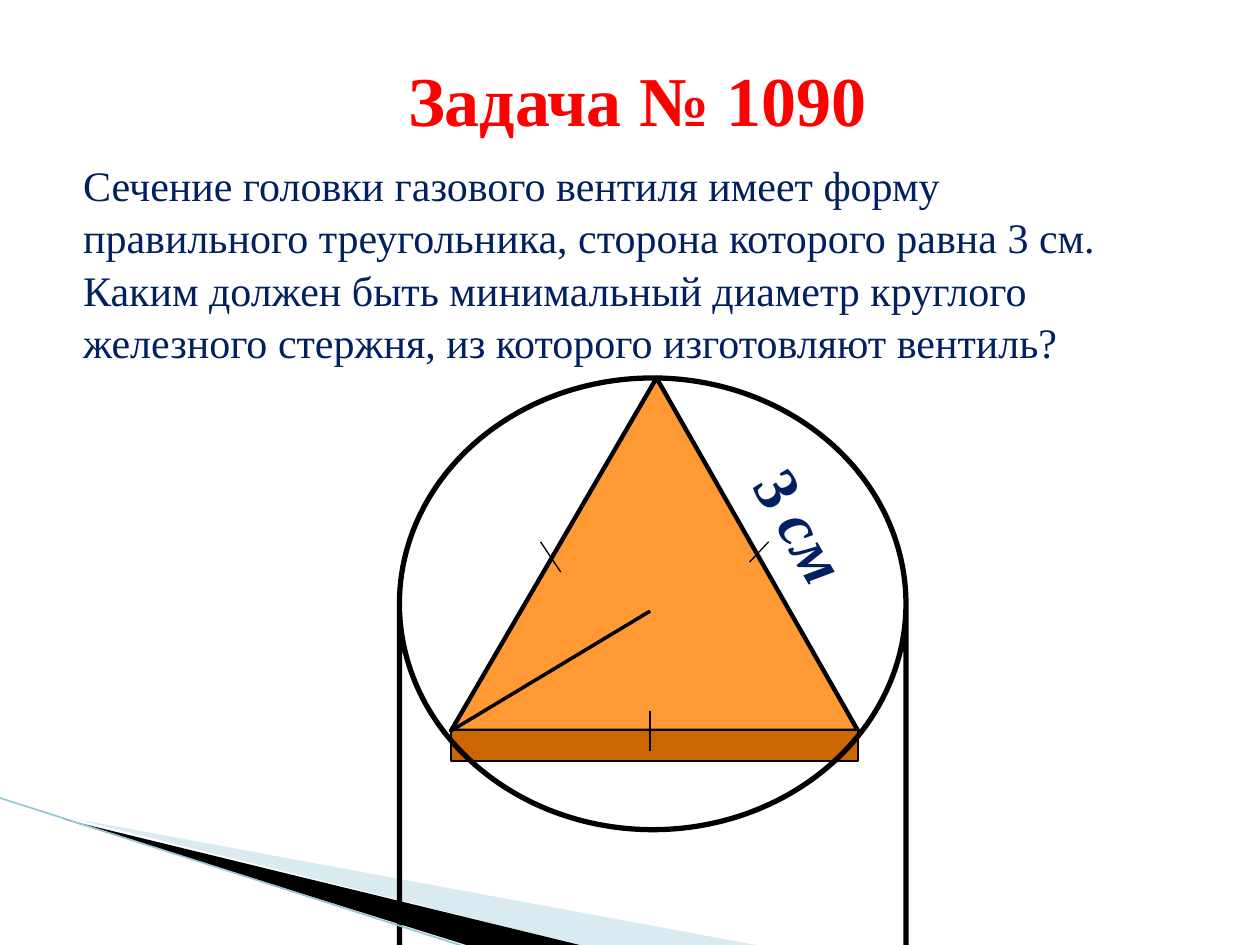
from lxml.etree import SubElement
from pptx import Presentation
from pptx.dml.color import RGBColor
from pptx.enum.shapes import MSO_CONNECTOR, MSO_SHAPE
from pptx.enum.text import MSO_ANCHOR, MSO_AUTO_SIZE, PP_ALIGN
from pptx.oxml.ns import qn
from pptx.util import Inches, Pt

COLORS = {
    "wave": "A0CBDC", "edge": "97C5D8", "black": "000000",
    "face": "FF9933", "base": "CC6600", "navy": "002060", "red": "FF0000",
}
FONT = "Times New Roman"

# Grid of 100 columns by 75 rows
prs = Presentation()
prs.slide_width, prs.slide_height = Inches(10), Inches(7.5)
CELL = prs.slide_width // 100
slide = prs.slides.add_slide(prs.slide_layouts[1])
shapes = slide.shapes


def grid(*cells):
    return [round(cell * CELL) for cell in cells]


def add_run(paragraph, text, size, color, bold=False, italic=False):
    run = paragraph.add_run()
    run.text = text
    run.font.name, run.font.size = FONT, Pt(size)
    run.font.bold, run.font.italic = bold, italic
    run.font.color.rgb = RGBColor.from_string(COLORS[color])


# Corner wave
for points, color, alpha in [
    ([(5.5, 65.1), (59.5, 75.1), (45.6, 75.1), (5.5, 65)], "wave", 40),
    ([(5.3, 64.9), (45.7, 75.1), (37.2, 75.2), (5.4, 65)], "black", 100),
]:
    builder = shapes.build_freeform(*points[0], scale=CELL)
    builder.add_line_segments(points[1:], close=True)
    wave = builder.convert_to_shape()
    wave.shadow.inherit = False
    wave.fill.solid()
    wave.fill.fore_color.rgb = RGBColor.from_string(COLORS[color])
    wave.line.fill.background()
    if alpha < 100:
        tint = wave.fill._xPr.find(qn("a:solidFill"))[0]
        SubElement(tint, qn("a:alpha"), val=str(alpha * 1000))

# Valve head: triangle, its base, and the rod around it
LEFT, TOP, WIDTH, HEIGHT = 35.8, 30, 32.3, 28
BASE = TOP + HEIGHT
for kind, box, adjust, color, weight in [
    (MSO_SHAPE.ISOSCELES_TRIANGLE, (LEFT, TOP, WIDTH, HEIGHT), 0.505, "face", 2.5),
    (MSO_SHAPE.RECTANGLE, (LEFT, BASE, WIDTH, 2.4), None, "base", 0.75),
    (MSO_SHAPE.CAN, (31.7, TOP, 40.2, 71.7), 0.892, None, 3),
]:
    part = shapes.add_shape(kind, *grid(*box))
    part.shadow.inherit = False
    if adjust:
        part.adjustments[0] = adjust
    if color:
        part.fill.solid()
        part.fill.fore_color.rgb = RGBColor.from_string(COLORS[color])
    else:
        part.fill.background()
    part.line.color.rgb = RGBColor.from_string(COLORS["black"])
    part.line.width = Pt(weight)

# Wave edge, equal-side ticks and radius
MIDDLE = 51.6
for ends, color, weight in [
    ((-0.1, 63.3, 37.1, 75.2), "edge", 0.95),
    ((42.9, 43, 44.5, 45.4), "black", 0.75),
    ((61, 43, 59.5, 44.6), "black", 0.75),
    ((MIDDLE, 59.6, MIDDLE, 56.4), "black", 0.75),
    ((MIDDLE, 48.5, LEFT, BASE), "black", 2),
]:
    stroke = shapes.add_connector(MSO_CONNECTOR.STRAIGHT, *grid(*ends))
    stroke.line.color.rgb = RGBColor.from_string(COLORS[color])
    stroke.line.width = Pt(weight)
    SubElement(stroke._element.spPr, qn("a:effectLst"))

# Side length
side = shapes.add_textbox(*grid(57.4, 39.2, 13.9, 7.1))
side.rotation = 59.6
side.text_frame.word_wrap = True
side_text = side.text_frame.paragraphs[0]
add_run(side_text, "3", 36, "navy", bold=True)
add_run(side_text, " см", 36, "navy", bold=True, italic=True)

# Heading and problem statement, in front of the drawing
heading, problem = shapes.title, slide.placeholders[1]
for holder, box, anchor in [
    (heading, (5.6, 3.6, 90, 8.4), MSO_ANCHOR.MIDDLE),
    (problem, (5.6, 12, 86.9, 21.5), MSO_ANCHOR.TOP),
]:
    holder.left, holder.top, holder.width, holder.height = grid(*box)
    holder.text_frame.word_wrap = True
    holder.text_frame.auto_size = MSO_AUTO_SIZE.NONE
    holder.text_frame.vertical_anchor = anchor
    shapes._spTree.append(holder._element)

heading_text = heading.text_frame.paragraphs[0]
heading_text.alignment = PP_ALIGN.CENTER
add_run(heading_text, "Задача № 1090", 40, "red", bold=True)

problem_text = problem.text_frame.paragraphs[0]
properties = problem_text._p.get_or_add_pPr()
properties.set("marL", "0")
properties.set("indent", "0")
SubElement(properties, qn("a:buNone"))
problem_text.alignment = PP_ALIGN.LEFT
problem_text.space_before = Pt(0)
problem_text.line_spacing = 1.04
add_run(
    problem_text,
    "Сечение головки газового вентиля имеет форму правильного треугольника, "
    "сторона которого равна 3 см. Каким должен быть минимальный диаметр "
    "круглого железного стержня, из которого изготовляют вентиль?",
    24, "navy",
)

prs.save("out.pptx")
